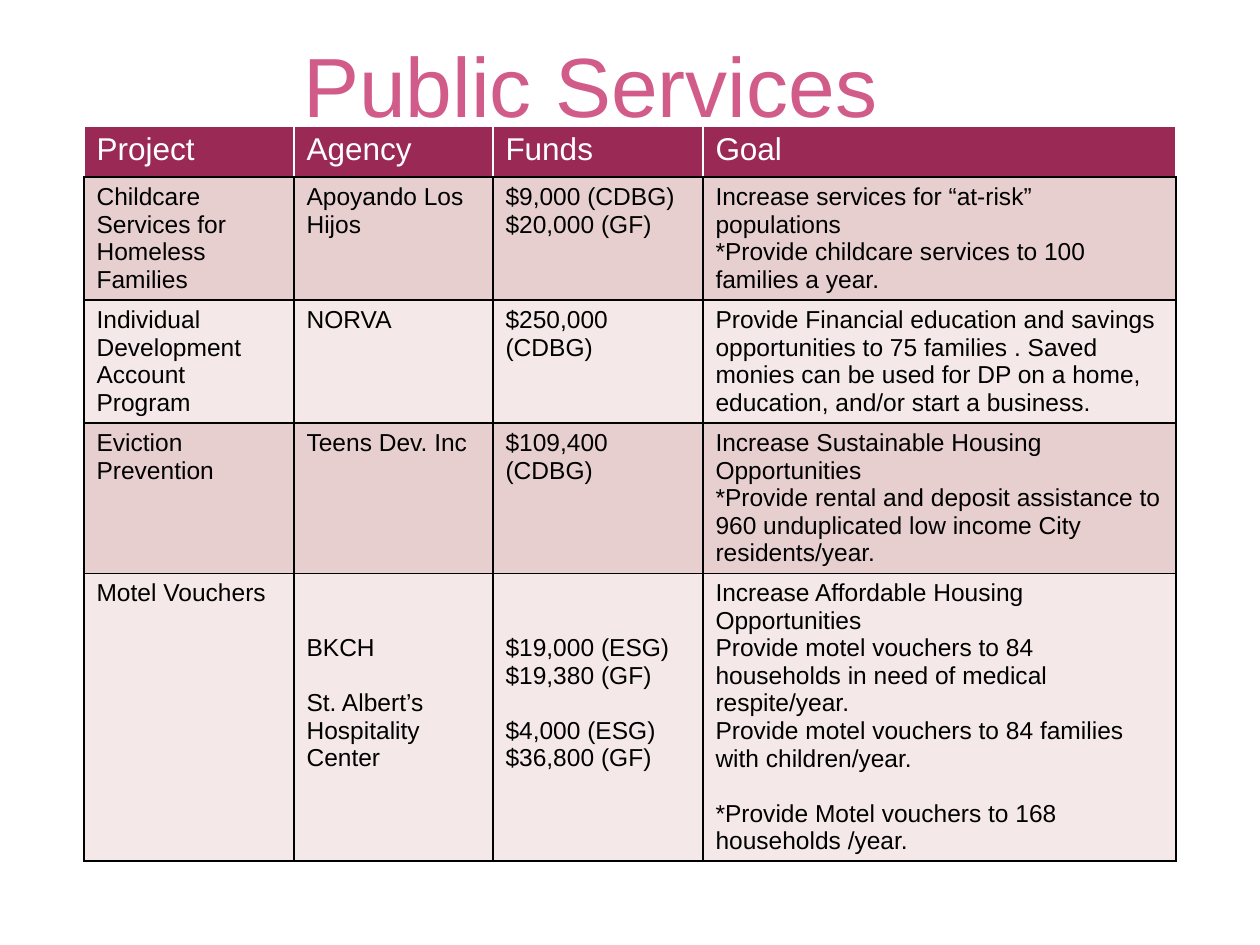
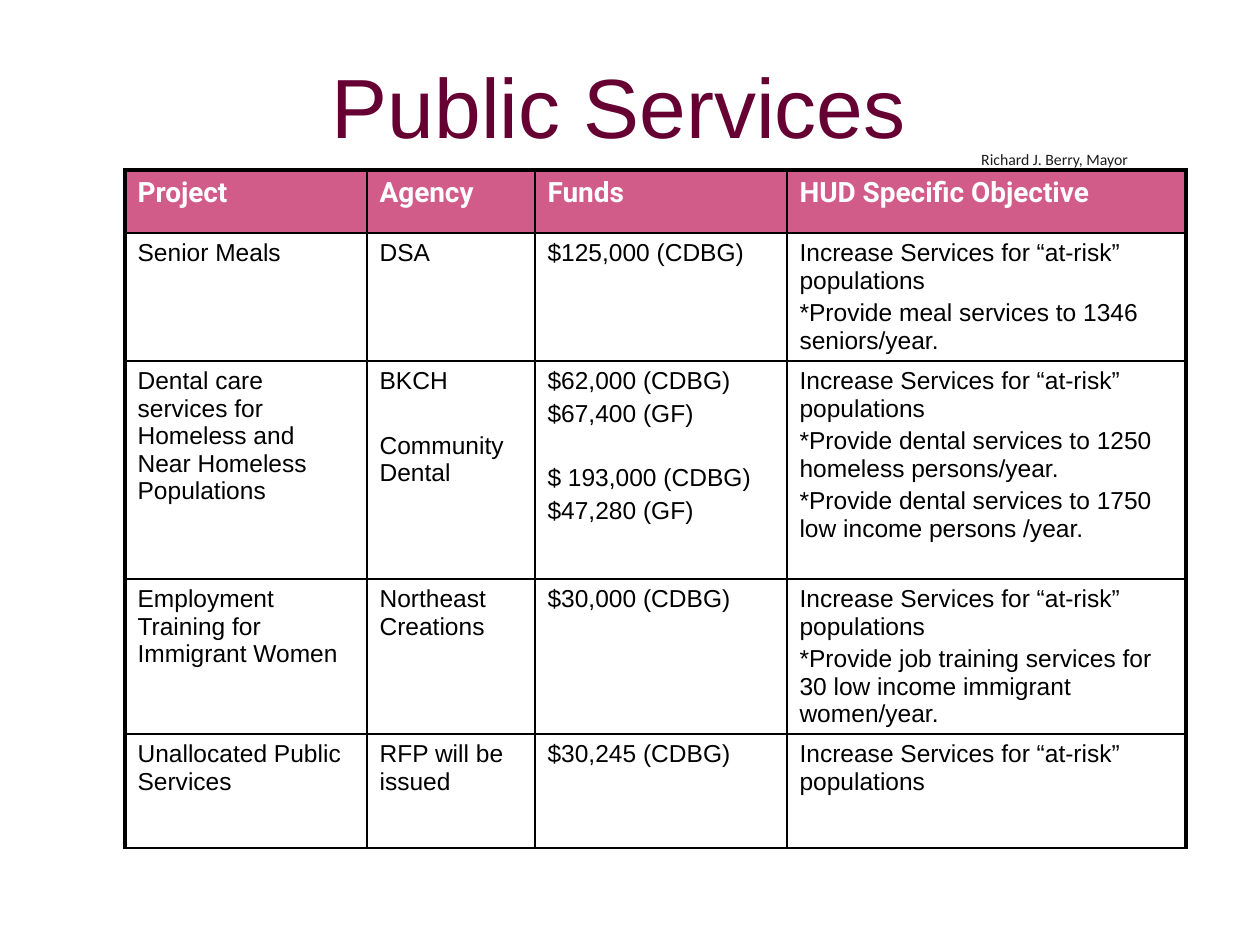
"""Build two slides that list public service projects in tables."""
from lxml import etree
from pptx import Presentation
from pptx.dml.color import RGBColor
from pptx.enum.text import MSO_ANCHOR, MSO_AUTO_SIZE, PP_ALIGN
from pptx.oxml.ns import qn
from pptx.util import Emu, Pt

MIDDLE, TOP = MSO_ANCHOR.MIDDLE, MSO_ANCHOR.TOP
CENTER, LEFT = PP_ALIGN.CENTER, PP_ALIGN.LEFT
NO_FIT = MSO_AUTO_SIZE.NONE
TITLE_ONLY = 5
EMU_PER_PX = 914400 / 126
BLACK, WHITE, PINK = "000000", "FFFFFF", "D25C89"
LINE_PT = 15.7
THIN, THICK = 1, 2.25


def px(length):
    return Emu(round(length * EMU_PER_PX))


def style(para, size, font, color, bold=False, align=LEFT):
    para.alignment = align
    for span in para.runs:
        span.font.size = Pt(size)
        span.font.name = font
        span.font.bold = bold
        span.font.color.rgb = RGBColor.from_string(color)


pages = [
    {
        "title_color": PINK,
        "title_box": (242, 21, 697, 126),
        "table_at": (84, 126),
        "columns": [210, 199, 210, 473],
        "heights": [51, 123, 123, 150, 288],
        "header": (18, "Arial", False, "9A2A55"),
        "header_line": WHITE,
        "outer_line": THIN,
        "bands": ["E8CFCF", "F4E8E8"],
        "rows": [
            ["Project", "Agency", "Funds", "Goal"],
            ["Childcare Services for Homeless Families", "Apoyando Los Hijos",
             "$9,000 (CDBG)\n$20,000 (GF)",
             "Increase services for “at-risk” populations\n"
             "*Provide childcare services to 100 families a year."],
            ["Individual Development Account Program", "NORVA", "$250,000 (CDBG)",
             "Provide Financial education and savings opportunities to 75 families . "
             "Saved monies can be used for DP on a home, education, and/or start a business."],
            ["Eviction Prevention", "Teens Dev. Inc", "$109,400 (CDBG)",
             "Increase Sustainable Housing Opportunities\n"
             "*Provide rental and deposit assistance to 960 unduplicated low income "
             "City residents/year."],
            ["Motel Vouchers", "\n\nBKCH\n\nSt. Albert’s Hospitality Center",
             "\n\n$19,000 (ESG)\n$19,380 (GF)\n\n$4,000 (ESG)\n$36,800 (GF)",
             "Increase Affordable Housing Opportunities\n"
             "Provide motel vouchers to 84 households in need of medical respite/year.\n"
             "Provide motel vouchers to 84 families with children/year.\n\n"
             "*Provide Motel vouchers to 168 households /year."],
        ],
        "para_gap": 0,
    },
    {
        "title_color": "660033",
        "title_box": (199, 42, 840, 126),
        "table_at": (125, 170),
        "columns": [242, 168, 252, 399],
        "heights": [63, 128, 218, 155, 114],
        "header": (16, "Roboto", True, PINK),
        "header_line": BLACK,
        "outer_line": THICK,
        "bands": [],
        "rows": [
            ["Project", "Agency", "Funds", "HUD Specific Objective"],
            ["Senior Meals", "DSA", "$125,000 (CDBG)",
             "Increase Services for “at-risk” populations\n"
             "*Provide meal services to 1346 seniors/year."],
            ["Dental care services for Homeless and Near Homeless Populations",
             "BKCH\n\nCommunity Dental",
             "$62,000 (CDBG)\n$67,400 (GF)\n\n$ 193,000 (CDBG)\n$47,280 (GF)",
             "Increase Services for “at-risk” populations\n"
             "*Provide dental services to 1250 homeless persons/year.\n"
             "*Provide dental services to 1750 low income persons /year."],
            ["Employment Training for Immigrant Women", "Northeast Creations",
             "$30,000 (CDBG)",
             "Increase Services for “at-risk” populations\n"
             "*Provide job training services for 30 low income immigrant women/year."],
            ["Unallocated Public Services", "RFP will be issued", "$30,245 (CDBG)",
             "Increase Services for “at-risk” populations"],
        ],
        "para_gap": 2.8,
    },
]

deck = Presentation()
deck.slide_width, deck.slide_height = px(1260), px(945)

for page in pages:
    slide = deck.slides.add_slide(deck.slide_layouts[TITLE_ONLY])
    title = slide.shapes.title
    title.left, title.top, title.width, title.height = map(px, page["title_box"])
    title.text_frame.text = "Public Services"
    title.text_frame.auto_size = NO_FIT
    title.text_frame.vertical_anchor = MIDDLE
    style(title.text_frame.paragraphs[0], 48, "Arial", page["title_color"], align=CENTER)

    rows, columns, heights = page["rows"], page["columns"], page["heights"]
    left, top = page["table_at"]
    table = slide.shapes.add_table(len(rows), len(columns), px(left), px(top),
                                   px(sum(columns)), px(sum(heights))).table
    table.first_row = table.horz_banding = False
    for column, width in zip(table.columns, columns):
        column.width = px(width)
    for row, height in zip(table.rows, heights):
        row.height = px(height)

    header_size, header_font, header_bold, header_fill = page["header"]
    for row_index, texts in enumerate(rows):
        is_header = row_index == 0
        for column_index, text in enumerate(texts):
            cell = table.cell(row_index, column_index)
            cell.vertical_anchor = TOP
            lines = text.split("\n")
            first = next(index for index, line in enumerate(lines) if line)
            cell.margin_top = Pt(3.6 + first * LINE_PT)
            cell.text_frame.text = lines[first]
            skipped = 0
            for line in lines[first + 1:]:
                if not line:
                    skipped += 1
                    continue
                para = cell.text_frame.add_paragraph()
                para.text = line
                gap = page["para_gap"]
                para.space_before = Pt(gap + skipped * (LINE_PT + gap))
                skipped = 0
            for para in cell.text_frame.paragraphs:
                if is_header:
                    style(para, header_size, header_font, WHITE, header_bold)
                else:
                    style(para, 14, "Arial", BLACK)

            side_color = page["header_line"] if is_header else BLACK
            outer = page["outer_line"]
            last_column = column_index == len(columns) - 1
            borders = [
                ("a:lnL", side_color, outer if column_index == 0 else THIN),
                ("a:lnR", side_color, outer if last_column else THIN),
                ("a:lnT", side_color, outer if is_header else THIN),
                ("a:lnB", BLACK, THIN),
            ]
            properties = cell._tc.get_or_add_tcPr()
            for tag, color, weight in borders:
                border = etree.SubElement(properties, qn(tag), w=str(Pt(weight)))
                solid = etree.SubElement(border, qn("a:solidFill"))
                etree.SubElement(solid, qn("a:srgbClr"), val=color)

            bands = page["bands"]
            if is_header or bands:
                fill = header_fill if is_header else bands[(row_index - 1) % len(bands)]
                cell.fill.solid()
                cell.fill.fore_color.rgb = RGBColor.from_string(fill)
            else:
                cell.fill.background()

mayor_box = slide.shapes.add_textbox(px(955), px(144), px(199), px(32))
mayor_box.text_frame.word_wrap = True
mayor_box.text_frame.text = "Richard J. Berry, Mayor"
style(mayor_box.text_frame.paragraphs[0], 9, "Calibri", "1C1C1C", align=CENTER)

deck.save("out.pptx")
